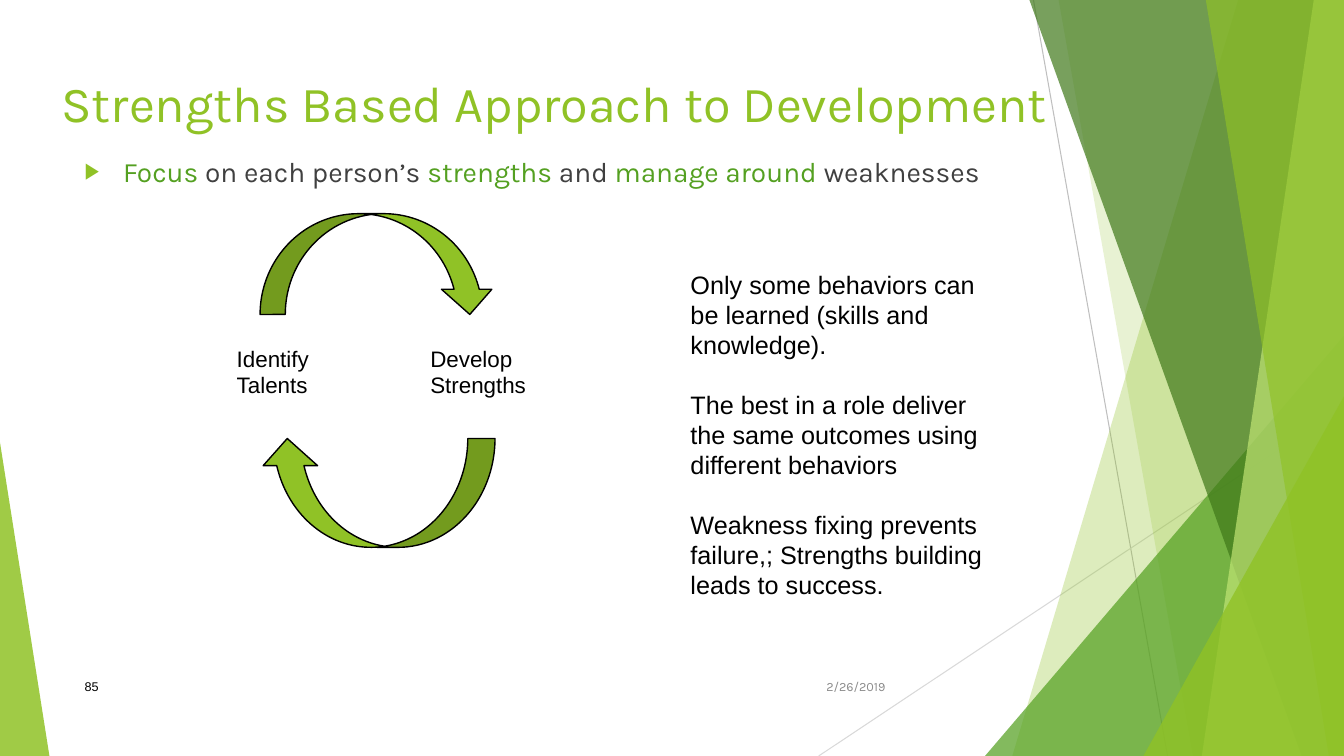
from lxml import etree
from pptx import Presentation
from pptx.dml.color import RGBColor
from pptx.enum import shapes as sh, text as tx
from pptx.oxml import ns
from pptx.util import Inches, Pt

LIME = RGBColor(0x90, 0xC2, 0x26)
GREEN = RGBColor(0x54, 0xA0, 0x21)
DARK = RGBColor(0x3F, 0x78, 0x19)
PALE = RGBColor(0xC0, 0xE4, 0x74)
GREY = RGBColor(0x40, 0x40, 0x40)
DIM = RGBColor(0x8C, 0x8C, 0x8C)
RULE = RGBColor(0xBF, 0xBF, 0xBF)
FAINT = RGBColor(0xD9, 0xD9, 0xD9)
BLACK = RGBColor(0, 0, 0)
WIDE, HIGH = 13.33, 7.5
SHAPE = sh.MSO_SHAPE


def sub(parent, tag, **attrs):
    return etree.SubElement(parent, ns.qn(tag), attrs)


def place(shape, box):
    shape.left, shape.top, shape.width, shape.height = map(Inches, box)


def write(frame, paras, size=18, font="Arial", color=BLACK, gap=0,
          align=tx.PP_ALIGN.LEFT, anchor=tx.MSO_ANCHOR.TOP):
    """Each paragraph is a string or a list of (text, colour) runs."""
    frame.word_wrap = True
    frame.auto_size = tx.MSO_AUTO_SIZE.NONE
    frame.vertical_anchor = anchor
    for i, runs in enumerate(paras):
        para = frame.add_paragraph() if i else frame.paragraphs[0]
        para.alignment = align
        para.space_before = Pt(gap if i else 0)
        for words, hue in [(runs, color)] if isinstance(runs, str) else runs:
            run = para.add_run()
            run.text = words
            run.font.size, run.font.name = Pt(size), font
            run.font.color.rgb = hue


def label(slide, box, *paras, **style):
    write(slide.shapes.add_textbox(*map(Inches, box)).text_frame, paras, **style)


def paint(shape, color, alpha=100, edge=None):
    shape.shadow.inherit = False
    shape.fill.solid()
    shape.fill.fore_color.rgb = color
    if alpha < 100:
        hue = shape._element.spPr.find(".//" + ns.qn("a:srgbClr"))
        sub(hue, "a:alpha", val=str(alpha * 1000))
    if edge is None:
        shape.line.fill.background()
    else:
        shape.line.color.rgb = edge
        shape.line.width = Pt(1)


def rule(slide, start, end, color):
    line = slide.shapes.add_connector(
        sh.MSO_CONNECTOR.STRAIGHT, *map(Inches, start + end))
    line.line.color.rgb = color
    line.line.width = Pt(0.75)
    sub(line._element.spPr, "a:effectLst")


def band(slide, top, foot, color, alpha):
    """Fill from a slanted left edge to the right side of the slide."""
    dots = [(top, 0), (WIDE, 0), (WIDE, HIGH), (foot, HIGH)]
    dots = [(Inches(x), Inches(y)) for x, y in dots]
    path = slide.shapes.build_freeform(*dots[0], scale=1.0)
    path.add_line_segments(dots[1:], close=True)
    paint(path.convert_to_shape(), color, alpha)


def wedge(slide, left, top, width, peak, color, alpha):
    box = map(Inches, (left, top, width, HIGH - top))
    tri = slide.shapes.add_shape(SHAPE.ISOSCELES_TRIANGLE, *box)
    tri.adjustments[0] = peak
    paint(tri, color, alpha)


def backdrop(slide):
    rule(slide, (10.25, 0), (11.58, HIGH), RULE)
    rule(slide, (WIDE, 4.03), (8.12, HIGH), FAINT)
    band(slide, 12.28, 10.04, LIME, 30)
    band(slide, 10.5, 11.83, LIME, 20)
    wedge(slide, 9.77, 3.33, 3.56, 1, GREEN, 72)
    band(slide, 10.21, 12.91, DARK, 70)
    band(slide, 13.03, 11.92, PALE, 70)
    band(slide, 11.96, 13.18, LIME, 65)
    wedge(slide, 11.34, 3.93, 1.99, 1, LIME, 80)
    wedge(slide, 0, 4.39, 0.49, 0, LIME, 85)


def heading(slide, title_box, body_box):
    title, body = slide.placeholders
    for holder, box in ((title, title_box), (body, body_box)):
        place(holder, box)
        slide.shapes._spTree.append(holder._element)  # in front of the bands
    write(title.text_frame, ["Strengths Based Approach to Development"],
          size=36, font="Karla", color=LIME)
    write(body.text_frame, [[
        ("Focus", GREEN), (" on each person’s ", GREY), ("strengths", GREEN),
        (" and ", GREY), ("manage around ", GREEN), ("weaknesses", GREY)]],
        size=20, font="Karla")
    # Arrow bullet with a hanging indent
    props = body.text_frame.paragraphs[0]._p.get_or_add_pPr()
    props.set("marL", str(Inches(0.38)))
    props.set("indent", str(-Inches(0.38)))
    sub(sub(props, "a:buClr"), "a:srgbClr", val=str(LIME))
    sub(props, "a:buSzPct", val="80000")
    sub(props, "a:buFont", typeface="Arial")
    sub(props, "a:buChar", char="▶")


def cycle(slide, left, top):
    """Two curved arrows around a pair of labels."""
    for kind, down, high in ((SHAPE.CURVED_DOWN_ARROW, 0, 1),
                             (SHAPE.CURVED_UP_ARROW, 2.23, 1.08)):
        box = map(Inches, (left + 0.33, top + down, 2.33, high))
        arrow = slide.shapes.add_shape(kind, *box)
        for i, part in enumerate((0.25, 0.5, 0.25)):
            arrow.adjustments[i] = part
        paint(arrow, LIME, edge=BLACK)
    arrow._element.spPr.find(ns.qn("a:xfrm")).set("flipH", "1")
    label(slide, (left, top + 1.25, 1.5, 0.64), "Identify Talents", size=16)
    label(slide, (left + 1.92, top + 1.25, 1.5, 0.64), "Develop Strengths", size=16)


def points(slide, box):
    label(slide, box,
          "Only some behaviors can be learned (skills and knowledge).",
          "The best in a role deliver the same outcomes using different behaviors",
          "Weakness fixing prevents failure,; Strengths building leads to success.",
          gap=21)


def footer(slide, left, top):
    mid = tx.MSO_ANCHOR.MIDDLE
    label(slide, (left + 7.14, top, 1, 0.4), "2/26/2019", size=9, font="Karla",
          color=DIM, align=tx.PP_ALIGN.RIGHT, anchor=mid)
    label(slide, (left, top, 6.89, 0.4), "85", size=9, anchor=mid)


def main():
    deck = Presentation()
    deck.slide_width, deck.slide_height = Inches(WIDE), Inches(HIGH)
    slide = deck.slides.add_slide(deck.slide_layouts[1])
    backdrop(slide)
    heading(slide, (0.51, 0.67, 10.31, 1.44), (0.74, 1.48, 9.4, 5.13))
    footer(slide, 0.74, 6.61)
    cycle(slide, 2.25, 2.12)
    points(slide, (6.75, 2.62, 3.25, 3.43))
    deck.save("out.pptx")


if __name__ == "__main__":
    main()
